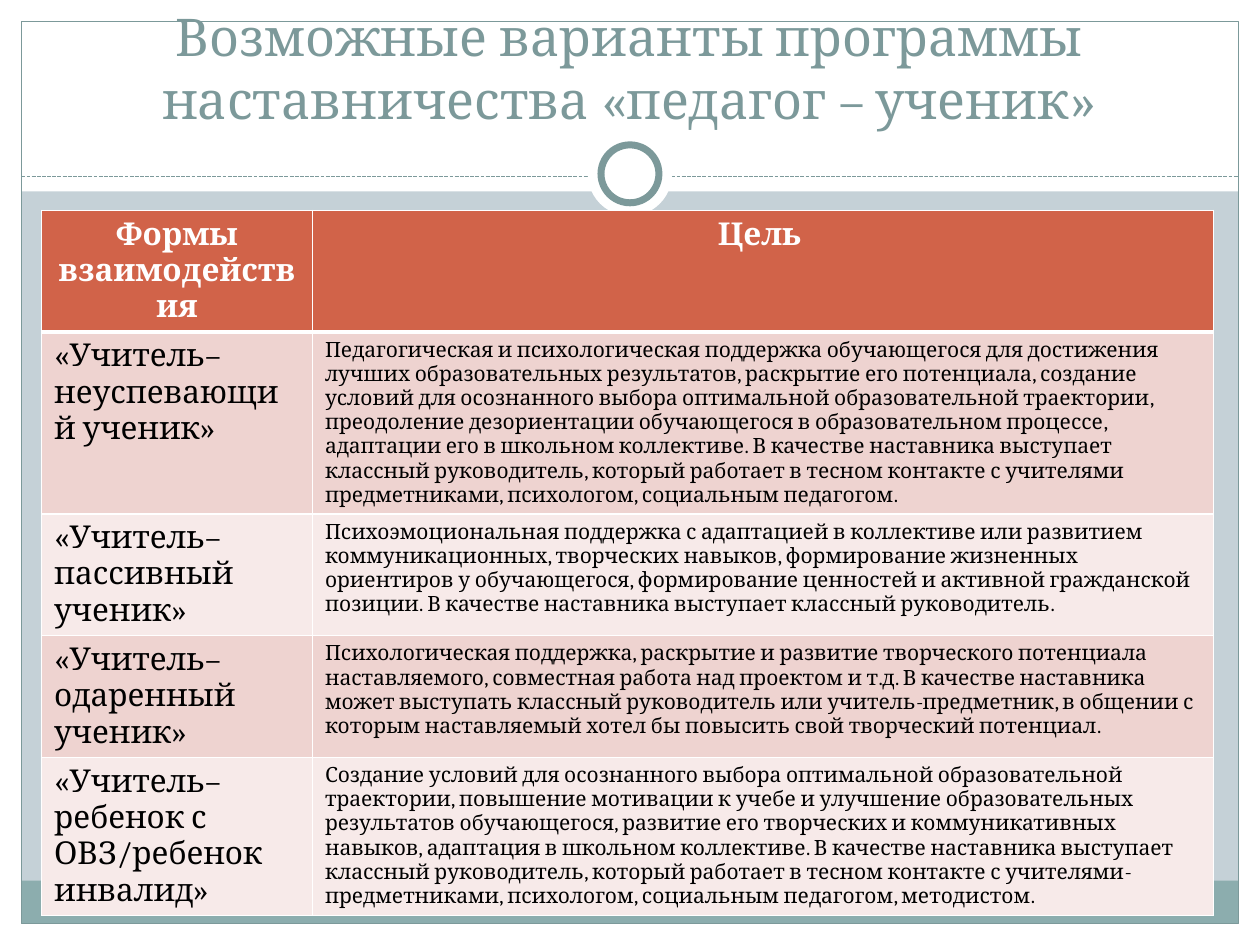
from dataclasses import dataclass

from lxml import etree
from pptx import Presentation
from pptx import util as u
from pptx.dml.color import RGBColor
from pptx.enum import dml, shapes, text
from pptx.oxml.ns import qn

In = u.Inches


@dataclass(frozen=True)
class Theme:
    font: str = "Cambria"
    back: str = "C5D1D7"
    white: str = "FFFFFF"
    ink: str = "000000"
    line: str = "7C999A"
    foot: str = "8CADAE"
    head: str = "D16349"
    bands: tuple = ("EED3D0", "F7EAE9")
    title: float = 29.7
    label: float = 18
    body: float = 12


T = Theme()

TITLE = "Возможные варианты программы наставничества «педагог – ученик»"
HEADS = ("Формы взаимодействия", "Цель ")
ROWS = (
    ("«Учитель– неуспевающий ученик»",
     "Педагогическая и психологическая поддержка обучающегося для достижения "
     "лучших образовательных результатов, раскрытие его потенциала, создание "
     "условий для осознанного выбора оптимальной образовательной траектории, "
     "преодоление дезориентации обучающегося в образовательном процессе, "
     "адаптации его в школьном коллективе. В качестве наставника выступает "
     "классный руководитель, который работает в тесном контакте с учителями "
     "предметниками, психологом, социальным педагогом."),
    ("«Учитель– пассивный ученик»",
     "Психоэмоциональная поддержка с адаптацией в коллективе или развитием "
     "коммуникационных, творческих навыков, формирование жизненных "
     "ориентиров у обучающегося, формирование ценностей и активной гражданской "
     "позиции. В качестве наставника выступает классный руководитель."),
    ("«Учитель– одаренный ученик»",
     "Психологическая поддержка, раскрытие и развитие творческого потенциала "
     "наставляемого, совместная работа над проектом и т.д. В качестве наставника "
     "может выступать классный руководитель или учитель-предметник, в общении с "
     "которым наставляемый хотел бы повысить свой творческий потенциал."),
    ("«Учитель– ребенок с ОВЗ/ребенок инвалид»",
     "Создание условий для осознанного выбора оптимальной образовательной "
     "траектории, повышение мотивации к учебе и улучшение образовательных "
     "результатов обучающегося, развитие его творческих и коммуникативных "
     "навыков, адаптация в школьном коллективе. В качестве наставника выступает "
     "классный руководитель, который работает в тесном контакте с "
     "учителями-предметниками, психологом, социальным педагогом, методистом."),
)


def rgb(hue):
    return RGBColor.from_string(hue)


def put(obj, vals):
    for key, val in vals.items():
        setattr(obj, key, val)


def write(frame, words, size, hue, bold=False, align=text.PP_ALIGN.LEFT):
    para = frame.paragraphs[0]
    para.alignment = align
    run = para.add_run()
    run.text = words
    put(run.font, {"name": T.font, "size": u.Pt(size), "bold": bold})
    run.font.color.rgb = rgb(hue)


def draw(slide, box, fill=None, line=None, width=0.75,
         kind=shapes.MSO_SHAPE.RECTANGLE):
    shape = slide.shapes.add_shape(kind, *map(In, box))
    shape.shadow.inherit = False
    if fill:
        shape.fill.solid()
        shape.fill.fore_color.rgb = rgb(fill)
    else:
        shape.fill.background()
    if line:
        shape.line.color.rgb = rgb(line)
        shape.line.width = u.Pt(width)
    else:
        shape.line.fill.background()


def add_frame(slide, box):
    """White margins, footer band, outline, dashed rule and ring."""
    x, y, w, h = box
    edge, rule = 0.17, 1.4
    right, base = x + w - edge, y + h - edge
    for part in ((x, base, w, edge), (x, y, w, 1.52),
                 (x, y, edge, h), (right, y, edge, h)):
        draw(slide, part, T.white)
    draw(slide, (x + edge, base - 0.34, w - 2 * edge, 0.34), T.foot)
    draw(slide, (x + edge, y + edge, w - 2 * edge, h - 2 * edge), line=T.line)

    # Dashed rule
    dash = slide.shapes.add_connector(
        shapes.MSO_CONNECTOR.STRAIGHT,
        In(x + edge), In(y + rule), In(right), In(y + rule))
    dash.line.color.rgb = rgb(T.line)
    put(dash.line, {"width": u.Pt(0.75),
                    "dash_style": dml.MSO_LINE.SQUARE_DOT})
    etree.SubElement(dash._element.spPr, qn("a:effectLst"))

    # Ring on a white disc
    mid = x + w / 2
    for size, line in ((0.67, None), (0.46, T.line)):
        draw(slide, (mid - size / 2, y + 1.38 - size / 2, size, size),
             T.white, line, 4, shapes.MSO_SHAPE.OVAL)


def add_title(slide, box):
    title = slide.shapes.title
    put(title, dict(zip(("left", "top", "width", "height"), map(In, box))))
    put(title.text_frame, {"word_wrap": True,
                           "auto_size": text.MSO_AUTO_SIZE.NONE,
                           "vertical_anchor": text.MSO_ANCHOR.BOTTOM})
    write(title.text_frame, TITLE, T.title, T.line,
          align=text.PP_ALIGN.CENTER)
    # Bring the title in front of the white band
    slide.shapes._spTree.append(title._element)


def style(cell, fill, widths):
    """Borders come first in the cell properties, then the fill."""
    props = cell._tc.get_or_add_tcPr()
    for side, width in widths.items():
        line = etree.SubElement(props, qn("a:ln" + side), w=str(u.Pt(width)))
        solid = etree.SubElement(line, qn("a:solidFill"))
        etree.SubElement(solid, qn("a:srgbClr"), val=T.white)
    cell.fill.solid()
    cell.fill.fore_color.rgb = rgb(fill)


def add_grid(slide, box):
    first = 2.15
    table = slide.shapes.add_table(
        len(ROWS) + 1, len(HEADS), *map(In, box)).table
    for col, width in zip(table.columns, (first, box[2] - first)):
        col.width = In(width)
    for row in table.rows:
        row.height = In(0.41)  # rows grow with their text

    for r, words in enumerate((HEADS,) + ROWS):
        for c, word in enumerate(words):
            cell = table.cell(r, c)
            if r == 0:
                fill, look = T.head, (T.label, T.white, True,
                                      text.PP_ALIGN.CENTER)
            else:
                fill = T.bands[(r - 1) % 2]
                look = ((T.label, T.body)[c], T.ink)
            style(cell, fill, {"L": 1, "R": 1, "T": 3 if r == 1 else 1,
                               "B": 3 if r == 0 else 1})
            write(cell.text_frame, word, *look)


def main():
    deck = Presentation()
    put(deck, {"slide_width": In(10), "slide_height": In(7.5)})
    slide = deck.slides.add_slide(deck.slide_layouts[5])
    slide.background.fill.solid()
    slide.background.fill.fore_color.rgb = rgb(T.back)
    add_frame(slide, (0, 0, 10, 7.5))
    add_title(slide, (0.33, 0.25, 9.33, 0.83))
    add_grid(slide, (0.33, 1.67, 9.3, 5.6))
    deck.save("out.pptx")


if __name__ == "__main__":
    main()
